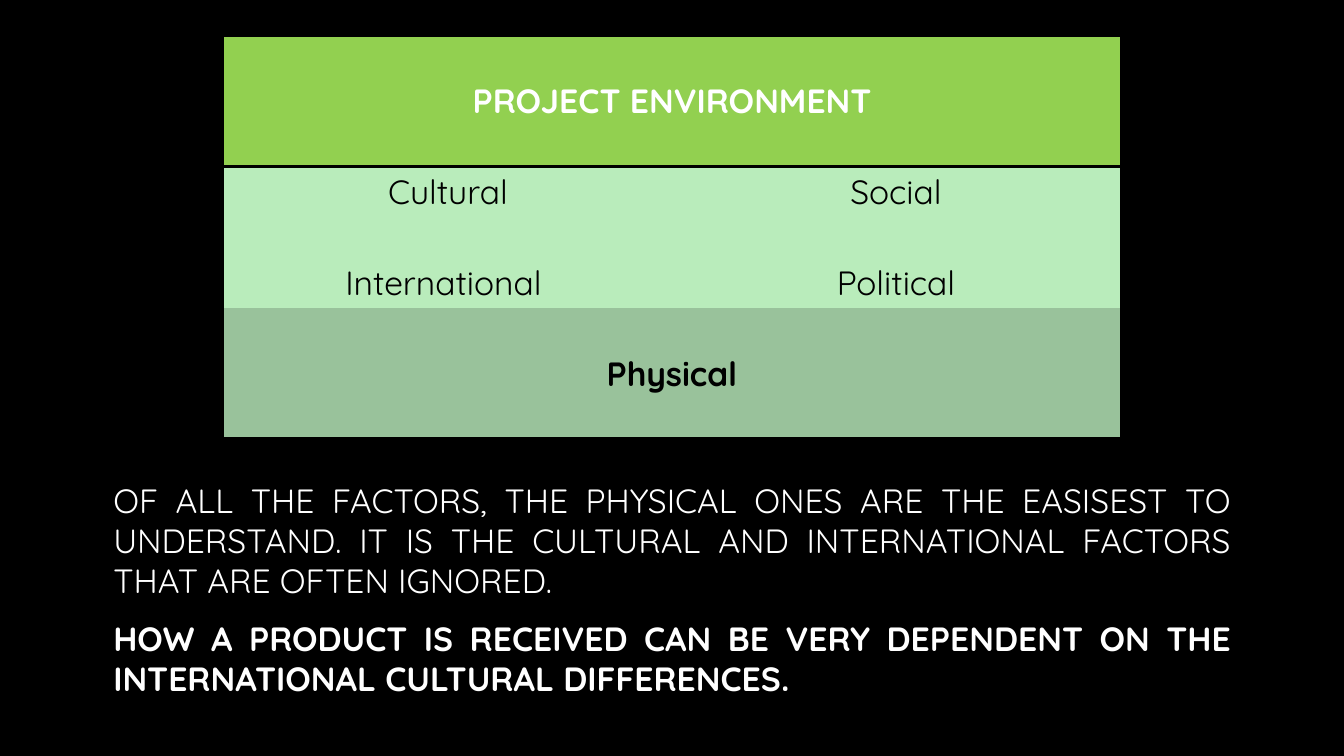
from lxml.etree import SubElement
from pptx import Presentation
from pptx.dml.color import RGBColor
from pptx.enum.text import MSO_ANCHOR as Anchor, PP_ALIGN as Align
from pptx.oxml.ns import qn
from pptx.util import Inches, Pt

WIDE, HIGH = 13.33, 7.5
FONT, SIZE = "Quicksand", 24
BLACK, WHITE = "000000", "FFFFFF"
LIME, MINT, SAGE = "92D050", "B9ECBB", "99C29B"
PLAIN = "{2D5ABB26-0587-4C30-8999-92F81FD0307C}"

# cell texts, height, fill, text colour, bold, anchor, ruled edges
ROWS = [
    (["PROJECT ENVIRONMENT"], 1.3, LIME, WHITE, True, Anchor.MIDDLE, ["lnT", "lnB"]),
    (["Cultural", "Social"], 0.5, MINT, BLACK, False, Anchor.TOP, []),
    (["International ", "Political"], 0.91, MINT, BLACK, False, Anchor.BOTTOM, []),
    (["Physical"], 1.29, SAGE, BLACK, True, Anchor.MIDDLE, ["lnB"]),
]
NOTES = [
    ("OF ALL THE FACTORS, THE PHYSICAL ONES ARE THE EASISEST TO UNDERSTAND. "
     "IT IS THE CULTURAL AND INTERNATIONAL FACTORS THAT ARE OFTEN IGNORED.", False),
    ("HOW A PRODUCT IS RECEIVED CAN BE VERY DEPENDENT ON THE "
     "INTERNATIONAL CULTURAL DIFFERENCES.", True),
]


def paint(fill, tone):
    fill.solid()
    fill.fore_color.rgb = RGBColor.from_string(tone)


def write(para, text, tone, bold, align):
    para.alignment = align
    run = para.add_run()
    run.text = text
    font = run.font
    font.name, font.size, font.bold = FONT, Pt(SIZE), bold
    font.color.rgb = RGBColor.from_string(tone)


def rule(cell, edges):
    """Draw black 2 pt borders; call before the cell is filled."""
    props = cell._tc.get_or_add_tcPr()
    for edge in edges:
        line = SubElement(props, qn("a:" + edge), w=str(Pt(2)))
        SubElement(SubElement(line, qn("a:solidFill")), qn("a:srgbClr"), val=BLACK)


def add_grid(slide):
    width = WIDE * 2 / 3
    box = [Inches(n) for n in ((WIDE - width) / 2, 0.35, width, sum(r[1] for r in ROWS))]
    frame = slide.shapes.add_table(len(ROWS), 2, *box)
    grid = frame.table
    grid._tbl.tblPr.find(qn("a:tableStyleId")).text = PLAIN
    grid.first_row = grid.horz_banding = False
    for i, (texts, high, fill, tone, bold, anchor, edges) in enumerate(ROWS):
        grid.rows[i].height = Inches(high)
        if len(texts) == 1:
            grid.cell(i, 0).merge(grid.cell(i, 1))
        for j in range(2):
            cell = grid.cell(i, j)
            rule(cell, edges)
            paint(cell.fill, fill)
            cell.vertical_anchor = anchor
            if j < len(texts):
                write(cell.text_frame.paragraphs[0], texts[j], tone, bold, Align.CENTER)


def add_notes(slide):
    width = 11.28
    box = [Inches(n) for n in ((WIDE - width) / 2, 4.71, width, 2.29)]
    frame = slide.shapes.add_textbox(*box).text_frame
    frame.word_wrap = True
    for i, (text, bold) in enumerate(NOTES):
        para = frame.add_paragraph() if i else frame.paragraphs[0]
        para.space_before = para.space_after = Pt(6)
        write(para, text, WHITE, bold, Align.JUSTIFY)


def main():
    deck = Presentation()
    deck.slide_width, deck.slide_height = Inches(WIDE), Inches(HIGH)
    slide = deck.slides.add_slide(deck.slide_layouts[6])
    paint(slide.background.fill, BLACK)
    add_notes(slide)
    add_grid(slide)
    deck.save("out.pptx")


if __name__ == "__main__":
    main()
